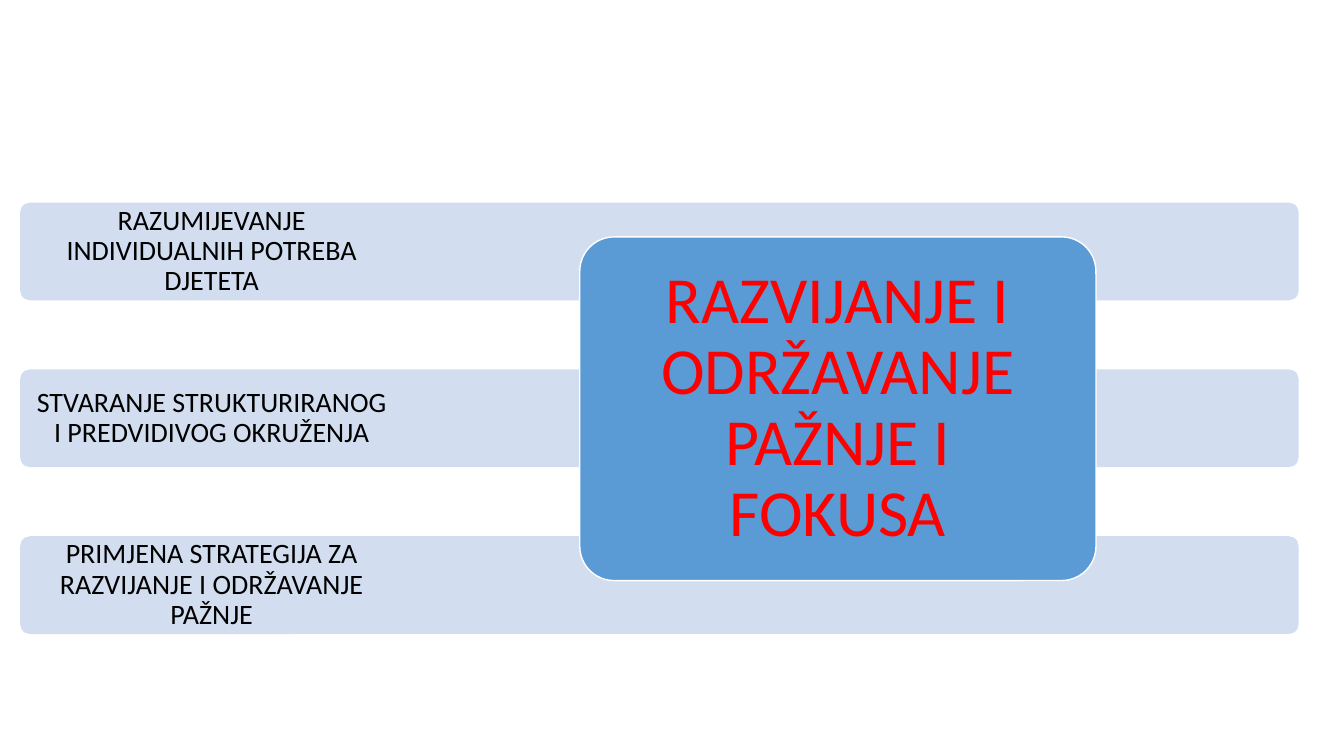
import pptx
import pptx.util
import pptx.dml.color
import pptx.enum.shapes
import pptx.enum.text

# Content
TITLE = "RAZVIJANJE I ODRŽAVANJE PAŽNJE I FOKUSA"
STEPS = [
    "RAZUMIJEVANJE INDIVIDUALNIH POTREBA DJETETA",
    "STVARANJE STRUKTURIRANOG I PREDVIDIVOG OKRUŽENJA",
    "PRIMJENA STRATEGIJA ZA RAZVIJANJE I ODRŽAVANJE PAŽNJE",
]
COLORS = {"bar": "D2DEEF", "box": "5B9BD5", "line": "FFFFFF",
          "step": "000000", "title": "FF0000"}

# Layout, in inches
LEFT, TOP, PITCH = 0.2, 2.01, 1.655
BAR_W, BAR_H, STEP_W = 12.68, 0.97, 3.8
BOX = (5.75, 2.35, 5.12, 3.41)
INSET = 0.1

Inches = pptx.util.Inches
Pt = pptx.util.Pt


def color(name):
    return pptx.dml.color.RGBColor.from_string(COLORS[name])


def add_bar(slide, area, fill):
    kind = pptx.enum.shapes.MSO_SHAPE.ROUNDED_RECTANGLE
    bar = slide.shapes.add_shape(kind, *map(Inches, area))
    bar.adjustments[0] = 0.1
    bar.shadow.inherit = False
    bar.fill.solid()
    bar.fill.fore_color.rgb = color(fill)
    bar.line.fill.background()
    return bar


def set_text(shape, text, size, tint, pad):
    frame = shape.text_frame
    frame.text = text
    look = {"word_wrap": True,
            "auto_size": pptx.enum.text.MSO_AUTO_SIZE.NONE,
            "vertical_anchor": pptx.enum.text.MSO_ANCHOR.MIDDLE}
    for side in ("left", "right", "top", "bottom"):
        look["margin_" + side] = Inches(pad)
    for key, value in look.items():
        setattr(frame, key, value)
    para = frame.paragraphs[0]
    para.alignment = pptx.enum.text.PP_ALIGN.CENTER
    para.line_spacing = 0.9
    for key, value in {"name": "Calibri", "size": Pt(size)}.items():
        setattr(para.font, key, value)
    para.font.color.rgb = color(tint)


def main():
    deck = pptx.Presentation()
    deck.slide_width, deck.slide_height = Inches(13.33), Inches(7.5)
    slide = deck.slides.add_slide(deck.slide_layouts[5])

    # Step bars with their labels
    for i, step in enumerate(STEPS):
        top = TOP + i * PITCH
        add_bar(slide, (LEFT, top, BAR_W, BAR_H), "bar")
        area = (LEFT, top, STEP_W, BAR_H)
        label = slide.shapes.add_textbox(*map(Inches, area))
        set_text(label, step, 20, "step", 0.16)

    # Central box
    box = add_bar(slide, BOX, "box")
    box.line.color.rgb = color("line")
    box.line.width = Pt(1)

    # Title, raised above the box
    title = slide.shapes.title
    left, top, width, height = BOX
    place = {"left": left + INSET, "top": top + INSET,
             "width": width - 2 * INSET, "height": height - 2 * INSET}
    for key, value in place.items():
        setattr(title, key, Inches(value))
    set_text(title, TITLE, 47, "title", 0.2)
    box.element.addnext(title.element)

    deck.save("out.pptx")


if __name__ == "__main__":
    main()
